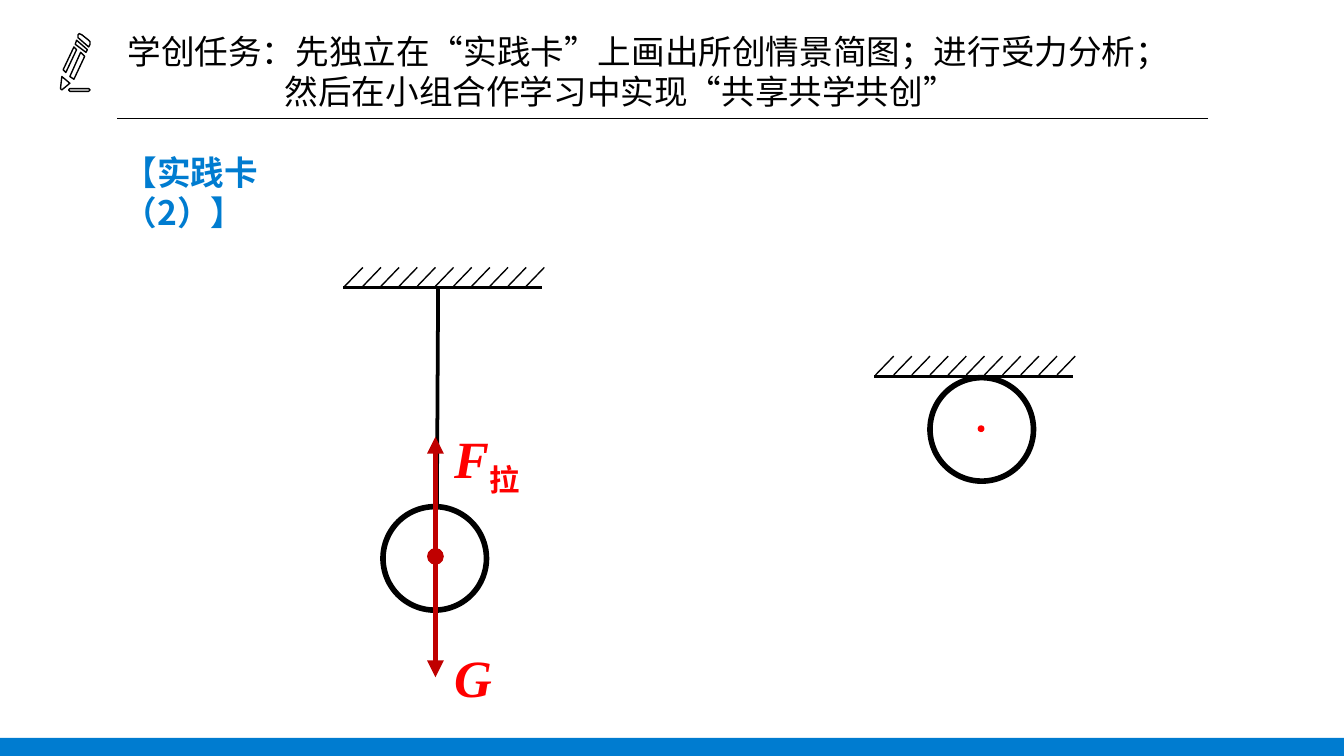
from lxml.etree import SubElement
from pptx import Presentation
from pptx.dml.color import RGBColor
from pptx.enum.shapes import MSO_CONNECTOR, MSO_SHAPE
from pptx.enum.text import MSO_AUTO_SIZE, PP_ALIGN
from pptx.oxml.ns import qn
from pptx.util import Inches, Pt

COLORS = {
    "blue": "007CD0",
    "black": "000000",
    "white": "FFFFFF",
    "red": "FF0000",
    "force": "C00000",
}
CJK = "Noto Sans CJK SC"

# Pencil icon outlines, in hundredths of an inch
PENCIL = [
    [(52, 66), (66, 66), (67, 67), (66, 68), (52, 68), (51, 67)],
    [(52, 57), (60, 39), (63, 42), (55, 59)],
    [(47, 52), (55, 35), (57, 37), (49, 54)],
    [(45, 66), (46, 57), (52, 62), (46, 67)],
    [(57, 30), (56, 33), (64, 39), (65, 37)],
    [(58, 26), (59, 25), (61, 26), (66, 30), (67, 31), (67, 33), (66, 35), (58, 28)],
]


def rgb(name):
    return RGBColor.from_string(COLORS[name])


def style_shape(sp, fill, line=None, width=0.75):
    sp.shadow.inherit = False
    sp.fill.solid()
    sp.fill.fore_color.rgb = rgb(fill)
    if line:
        sp.line.color.rgb = rgb(line)
        sp.line.width = Pt(width)
    else:
        sp.line.fill.background()


def add_line(shapes, start, end, width=0.75, color="black", head=None, tail=None):
    line = shapes.add_connector(
        MSO_CONNECTOR.STRAIGHT, *(Inches(v) for v in (*start, *end)))
    line.line.color.rgb = rgb(color)
    line.line.width = Pt(width)
    ln = line.line._get_or_add_ln()
    for tag, kind in (("a:headEnd", head), ("a:tailEnd", tail)):
        if kind:
            SubElement(ln, qn(tag), type=kind)
    SubElement(line._element.spPr, qn("a:effectLst"))


def add_circle(shapes, x, y, size, fill, line, width=0.75):
    sp = shapes.add_shape(
        MSO_SHAPE.OVAL, Inches(x), Inches(y), Inches(size), Inches(size))
    style_shape(sp, fill, line, width)
    return sp


def add_text(shapes, box, lines, size, font, color, bold=False, italic=False, inset=None):
    tf = shapes.add_textbox(*(Inches(v) for v in box)).text_frame
    tf.word_wrap = True
    if inset is not None:
        tf.margin_left = tf.margin_right = Inches(inset)
        tf.margin_top = tf.margin_bottom = Inches(inset)
    for i, line in enumerate(lines):
        p = tf.paragraphs[0] if i == 0 else tf.add_paragraph()
        r = p.add_run()
        r.text = line
        p.font.size = Pt(size)
        p.font.name = font
        p.font.color.rgb = rgb(color)
        p.font.bold = bold
        p.font.italic = italic
    return tf


def set_east_asian(r, font):
    rPr = r._r.get_or_add_rPr()
    rPr.set("lang", "zh-CN")
    SubElement(rPr, qn("a:ea"), typeface=font)


def add_pencil(shapes):
    builder = shapes.build_freeform(*PENCIL[0][0], scale=Inches(0.01))
    for i, outline in enumerate(PENCIL):
        if i:
            builder.move_to(*outline[0])
        builder.add_line_segments(outline[1:], close=True)
    style_shape(builder.convert_to_shape(), "white", "black")


def add_ceiling(shapes, x, y):
    """Hatched support whose lower edge starts at (x, y)."""
    pitch = 0.135
    for i in range(11):
        left = x + 0.015 + i * pitch
        add_line(shapes, (left, y - 0.01), (left + pitch, y - 0.15))
    add_line(shapes, (x + 1.48, y), (x, y), 1.5)


def add_ball(shapes, x, y):
    ball = add_circle(shapes, x, y, 0.77, "white", "black", 3)
    ball.rotation = 320
    add_circle(shapes, x + 0.36, y + 0.36, 0.04, "red", "red")


def add_force(shapes, start, end, label_box, label, head=None):
    add_line(shapes, start, end, 3, "force", head, "triangle")
    tf = add_text(shapes, label_box, [label], 28, "Times New Roman", "red",
                  bold=True, italic=True, inset=0)
    tf.paragraphs[0].alignment = PP_ALIGN.JUSTIFY
    return tf


def add_header(shapes):
    tf = add_text(
        shapes, (0.85, 0.18, 8.08, 0.71),
        ["学创任务：先独立在“实践卡”上画出所创情景简图；进行受力分析；",
         "然后在小组合作学习中实现“共享共学共创”"],
        18, "Calibri", "black")
    tf.auto_size = MSO_AUTO_SIZE.SHAPE_TO_FIT_TEXT
    for p in tf.paragraphs:
        set_east_asian(p.runs[0], CJK)
    # Second line is indented under the task wording
    tf.paragraphs[1]._p.get_or_add_pPr().set("marL", str(Inches(1.17)))
    add_pencil(shapes)
    add_line(shapes, (8.99, 0.88), (0.87, 0.88))


def main():
    prs = Presentation()
    prs.slide_width = Inches(10)
    prs.slide_height = prs.slide_width * 9 // 16
    s = prs.slides.add_slide(prs.slide_layouts[6])

    # Bottom band and header
    bar = s.shapes.add_shape(
        MSO_SHAPE.RECTANGLE, 0, Inches(5.49), prs.slide_width, Inches(0.14))
    style_shape(bar, "blue")
    add_header(s.shapes)

    # Card title
    tf = add_text(s.shapes, (0.83, 1.08, 1.97, 0.4), ["【实践卡（2）】"],
                  18, CJK, "blue", bold=True)
    tf.margin_left = tf.margin_right = Inches(0.09)
    tf.auto_size = MSO_AUTO_SIZE.SHAPE_TO_FIT_TEXT
    set_east_asian(tf.paragraphs[0].runs[0], CJK)

    # Ball hanging on a rope
    hanging = s.shapes.add_group_shape().shapes
    add_ceiling(hanging, 2.55, 2.14)
    add_line(hanging, (3.26, 2.14), (3.25, 3.87), 2)
    add_ball(hanging, 2.85, 3.77)

    # Ball touching the ceiling
    touching = s.shapes.add_group_shape().shapes
    add_ceiling(touching, 6.5, 2.8)
    add_ball(touching, 6.92, 2.81)

    # Weight and tension
    weight = s.shapes.add_group_shape().shapes
    add_force(weight, (3.24, 4.14), (3.24, 5.04), (3.38, 4.8, 0.37, 0.41), "G", "oval")
    tension = s.shapes.add_group_shape().shapes
    tf = add_force(tension, (3.24, 4.16), (3.24, 3.25), (3.38, 3.17, 0.53, 0.53), "F")
    r = tf.paragraphs[0].add_run()
    r.text = "拉"
    r.font.italic = False
    r._r.get_or_add_rPr().set("baseline", "-25000")

    prs.save("out.pptx")


if __name__ == "__main__":
    main()
